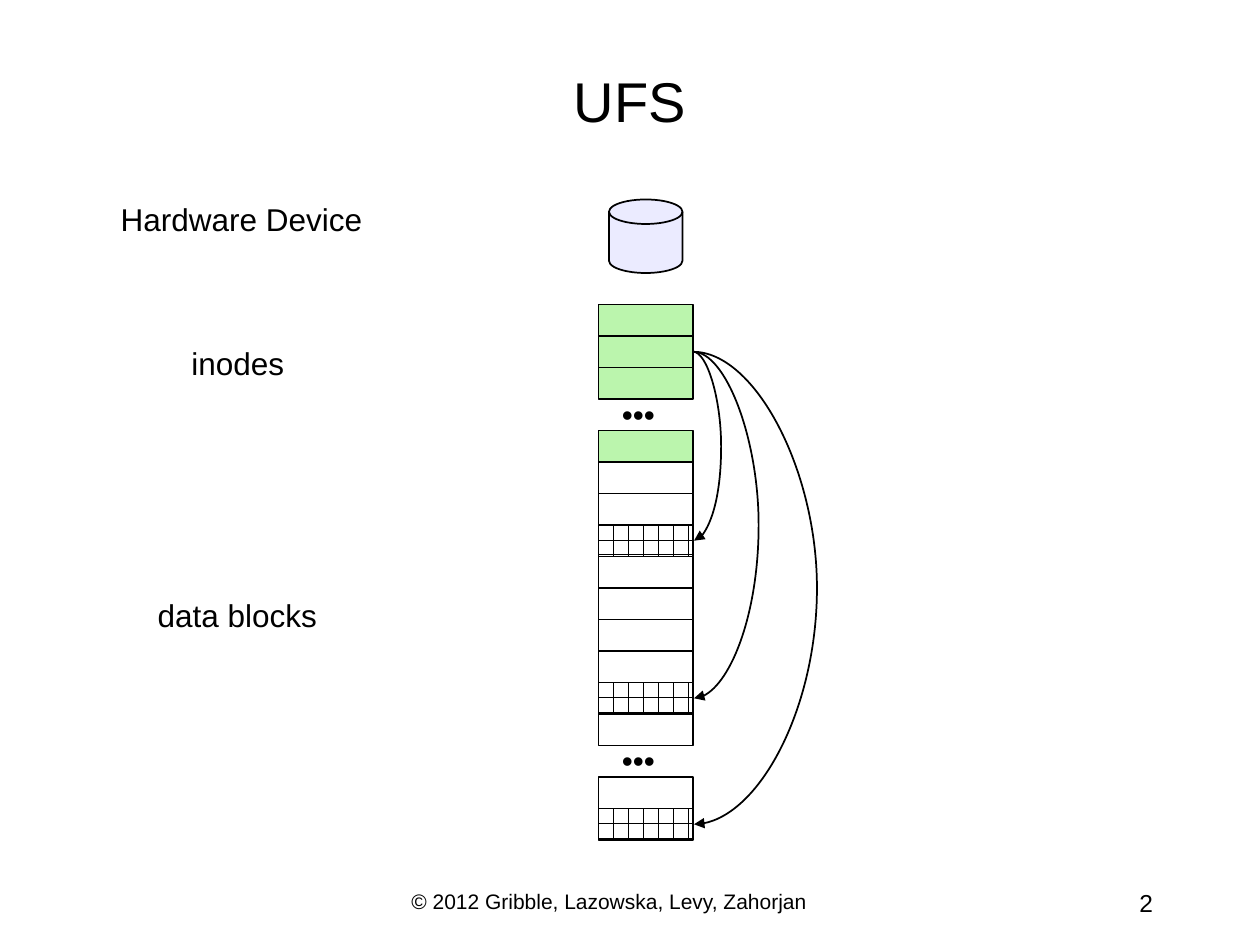
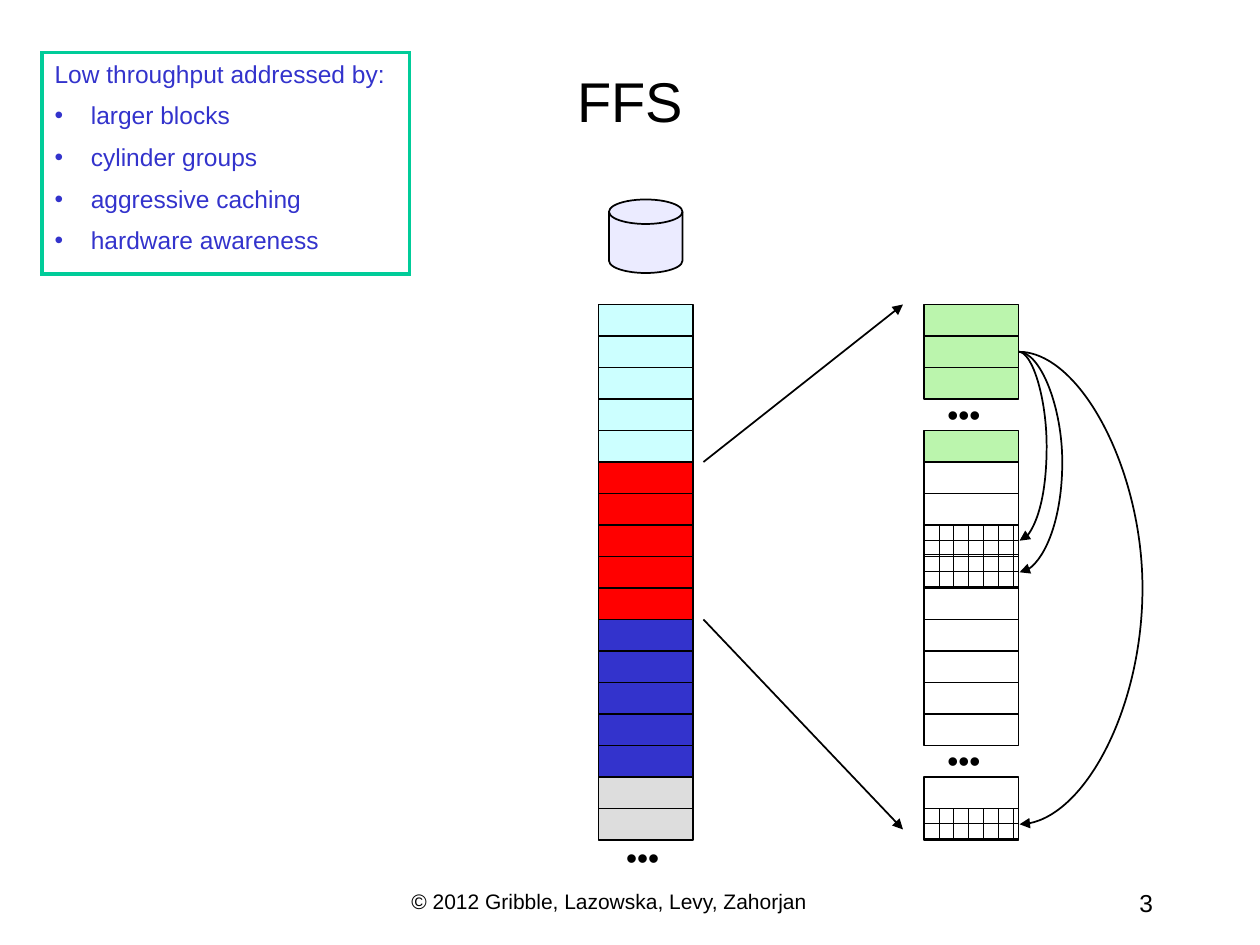
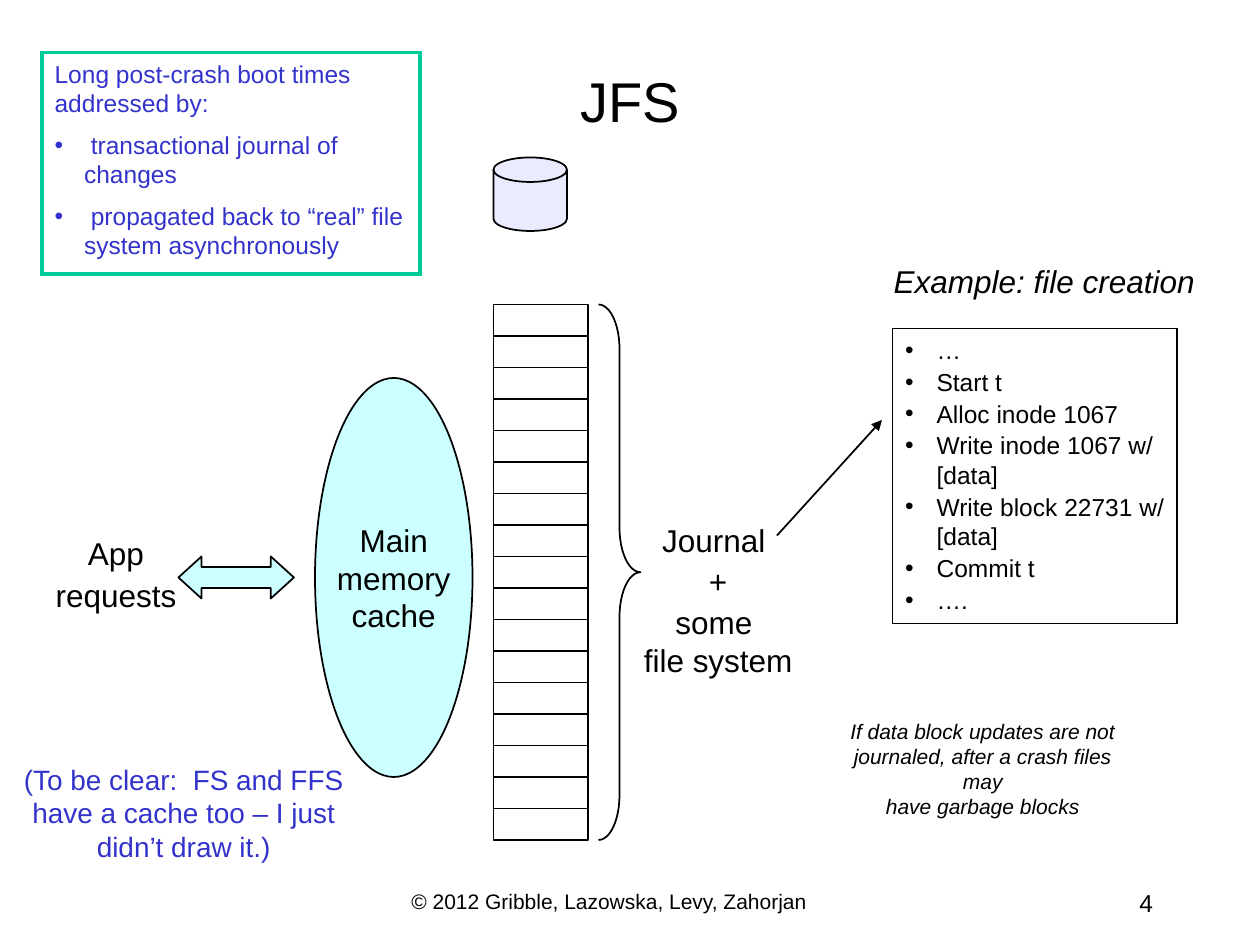
from collections import namedtuple

from lxml.etree import SubElement
from pptx import Presentation
from pptx.dml.color import RGBColor
from pptx.enum.dml import MSO_PATTERN
from pptx.enum.shapes import MSO_CONNECTOR, MSO_SHAPE
from pptx.enum.text import MSO_ANCHOR, MSO_AUTO_SIZE, PP_ALIGN
from pptx.oxml.ns import qn
from pptx.util import Emu, Pt

PX = 7620
FONT = "Arial"
BLACK = RGBColor(0x00, 0x00, 0x00)
WHITE = RGBColor(0xFF, 0xFF, 0xFF)
LAVENDER = RGBColor(0xEB, 0xEB, 0xFF)
GREEN = RGBColor(0xBB, 0xF5, 0xAD)
CYAN = RGBColor(0xCC, 0xFF, 0xFF)
RED = RGBColor(0xFF, 0x00, 0x00)
BLUE = RGBColor(0x33, 0x33, 0xCC)
GRAY = RGBColor(0xDD, 0xDD, 0xDD)
TEAL = RGBColor(0x00, 0xCC, 0x99)

EMPTY, BRICK, GAP = "empty", "brick", "gap"
INODES = [GREEN] * 3 + [GAP, GREEN]
UFS_BLOCKS = INODES + [EMPTY] * 2 + [BRICK] + [EMPTY] * 4 + [BRICK, EMPTY, GAP, EMPTY, BRICK]
FFS_BLOCKS = INODES + [EMPTY] * 2 + [BRICK] * 2 + [EMPTY] * 5 + [GAP, EMPTY, BRICK]
CYLINDER_GROUPS = [CYAN] * 5 + [RED] * 5 + [BLUE] * 5 + [GRAY] * 2

TITLE_AND_LIST, TWO_LISTS, TITLE_ONLY = 1, 3, 5

Box = namedtuple("Box", "left top width height")
SLIDE = Box(0, 0, 1200, 900)


def px(length):
    """Turn px into EMU."""
    return Emu(length * PX)


def emu_box(box):
    """Turn a box in px into four EMU lengths."""
    return [px(length) for length in box]


def style_text(frame, size, color=BLACK, align=PP_ALIGN.CENTER, gap=2, italic=False):
    """Format every paragraph and run of a text frame."""
    for index, paragraph in enumerate(frame.paragraphs):
        paragraph.alignment = align
        paragraph.space_before = Pt(gap if index else 0)
        for run in paragraph.runs:
            run.font.name = FONT
            run.font.size = Pt(size)
            run.font.italic = italic
            run.font.color.rgb = color
        for line_break in paragraph._p.findall(qn("a:br")):
            SubElement(line_break, qn("a:rPr"), sz=str(size * 100))


def add_label(slide, box, text, size=18, wrap=False, **style):
    """Add a text box holding one styled label."""
    frame = slide.shapes.add_textbox(*emu_box(box)).text_frame
    frame.word_wrap = wrap
    frame.text = text
    style_text(frame, size, **style)


def add_dots(slide, left, top):
    """Add the dots that stand for skipped blocks."""
    add_label(slide, Box(left, top, 66, 48), "•••")


def add_outlined(slide, kind, box, fill=EMPTY):
    """Add a black-outlined preset shape with a solid, brick or empty fill."""
    shape = slide.shapes.add_shape(kind, *emu_box(box))
    shape.shadow.inherit = False
    shape.line.color.rgb = BLACK
    shape.line.width = Pt(1)
    if fill == EMPTY:
        shape.fill.background()
    elif fill == BRICK:
        shape.fill.patterned()
        shape.fill.pattern = MSO_PATTERN.HORIZONTAL_BRICK
        shape.fill.fore_color.rgb = BLACK
        shape.fill.back_color.rgb = WHITE
    else:
        shape.fill.solid()
        shape.fill.fore_color.rgb = fill
    return shape


def add_disk(slide, left, top):
    """Add the hardware device."""
    add_outlined(slide, MSO_SHAPE.FLOWCHART_MAGNETIC_DISK, Box(left, top, 70, 70), LAVENDER)


def add_stack(slide, box, fills):
    """Stack equal blocks in the box and return them by row."""
    height = box.height // len(fills)
    blocks = {}
    for row, fill in enumerate(fills):
        top = box.top + row * height
        if fill == GAP:
            add_dots(slide, box.left + 5, top - 10)
        else:
            cell = Box(box.left, top, box.width, height)
            blocks[row] = add_outlined(slide, MSO_SHAPE.RECTANGLE, cell, fill)
    return blocks


def add_arrow(slide, kind, start, end):
    """Add a connector with an arrowhead at its end."""
    arrow = slide.shapes.add_connector(kind, *[px(length) for length in start + end])
    arrow.line.color.rgb = BLACK
    arrow.line.width = Pt(1)
    properties = arrow._element.spPr
    SubElement(properties.find(qn("a:ln")), qn("a:tailEnd"), type="triangle")
    SubElement(properties, qn("a:effectLst"))
    return arrow


def add_pointers(slide, blocks, bulges):
    """Curve an arrow from the second inode to each data block, by row and bulge."""
    for row, bulge in bulges.items():
        pointer = add_arrow(slide, MSO_CONNECTOR.CURVE, (0, 0), (1, 1))
        pointer.end_connect(blocks[row], 3)
        pointer.begin_connect(blocks[1], 3)
        pointer.width = px(1)
        geometry = pointer._element.spPr.find(qn("a:prstGeom"))
        guides = geometry.find(qn("a:avLst"))
        if guides is None:
            guides = SubElement(geometry, qn("a:avLst"))
        SubElement(guides, qn("a:gd"), name="adj1", fmla=f"val {bulge * 100000}")


def fill_list(holder, box, lines, color, border, weight, indent, gap, heading=False):
    """Move a body placeholder into the box and fill it with a bulleted list."""
    holder.left, holder.top, holder.width, holder.height = emu_box(box)
    holder.line.color.rgb = border
    holder.line.width = Pt(weight)
    SubElement(holder._element.spPr.find(qn("a:ln")), qn("a:miter"), lim="800000")
    frame = holder.text_frame
    frame.text = "\n".join(lines)
    frame.auto_size = MSO_AUTO_SIZE.NONE
    frame.vertical_anchor = MSO_ANCHOR.TOP
    frame.word_wrap = heading
    style_text(frame, 14, color, PP_ALIGN.LEFT, gap)
    for index, paragraph in enumerate(frame.paragraphs):
        properties = paragraph._p.get_or_add_pPr()
        if heading and index == 0:
            properties.set("marL", "0")
            properties.set("indent", "0")
            SubElement(properties, qn("a:buNone"))
        else:
            properties.set("marL", str(px(indent)))
            properties.set("indent", str(-px(indent)))
            SubElement(properties, qn("a:buFont"), typeface=FONT)
            SubElement(properties, qn("a:buChar"), char="•")


def fill_summary(holder, width, lines):
    """Fill the bordered summary in the top left corner."""
    fill_list(holder, Box(40, 50, width, 211), lines, BLUE, TEAL, 2, 28, 7, heading=True)


def start_slide(deck, layout, name, number):
    """Add a slide with its title, copyright line and number."""
    slide = deck.slides.add_slide(deck.slide_layouts[layout])
    title = slide.shapes.title
    title.left, title.top, title.width, title.height = emu_box(Box(0, 50, SLIDE.width, 90))
    title.text_frame.text = name
    title.text_frame.vertical_anchor = MSO_ANCHOR.MIDDLE
    style_text(title.text_frame, 32)
    add_label(slide, Box(380, 840, 440, 40), "© 2012 Gribble, Lazowska, Levy, Zahorjan",
              12, wrap=True, align=PP_ALIGN.LEFT)
    add_label(slide, Box(860, 840, 250, 40), str(number), 14, wrap=True, align=PP_ALIGN.RIGHT)
    return slide


def build_ufs(deck):
    """Show inodes pointing at scattered data blocks."""
    slide = start_slide(deck, TITLE_ONLY, "UFS", 2)
    add_disk(slide, 580, 190)
    blocks = add_stack(slide, Box(570, 290, 90, 510), UFS_BLOCKS)
    add_pointers(slide, blocks, {7: 27, 12: 63, 16: 119})
    add_label(slide, Box(103, 185, 254, 48), "Hardware Device")
    add_label(slide, Box(170, 322, 113, 48), "inodes")
    add_label(slide, Box(138, 562, 176, 48), "data blocks")


def build_ffs(deck):
    """Show cylinder groups and one of them opened up."""
    slide = start_slide(deck, TITLE_AND_LIST, "FFS", 3)
    add_disk(slide, 580, 190)
    blocks = add_stack(slide, Box(880, 290, 90, 510), FFS_BLOCKS)
    add_pointers(slide, blocks, {7: 27, 8: 42, 16: 119})
    add_stack(slide, Box(570, 290, 90, 510), CYLINDER_GROUPS)
    add_dots(slide, 579, 792)
    add_arrow(slide, MSO_CONNECTOR.STRAIGHT, (670, 440), (860, 290))
    add_arrow(slide, MSO_CONNECTOR.STRAIGHT, (670, 590), (860, 790))
    fill_summary(slide.placeholders[1], 350, [
        "Low throughput addressed by:",
        " larger blocks",
        " cylinder groups",
        " aggressive caching",
        " hardware awareness",
    ])


def add_cache(slide, box):
    """Add the memory cache with the requests that reach it from the left."""
    cache = Box(box.left + 260, box.top, 150, box.height)
    ellipse = add_outlined(slide, MSO_SHAPE.OVAL, cache, CYAN)
    frame = ellipse.text_frame
    frame.word_wrap = False
    frame.vertical_anchor = MSO_ANCHOR.MIDDLE
    frame.text = "Main\vmemory\vcache"
    style_text(frame, 18)
    exchange = Box(box.left + 130, box.top + 170, 110, 40)
    arrow = add_outlined(slide, MSO_SHAPE.LEFT_RIGHT_ARROW, exchange, CYAN)
    arrow.adjustments[1] = 0.55
    add_label(slide, Box(box.left + 1, box.top + 143, 139, 88), "App\nrequests")


def add_journal(slide, box):
    """Add the block stack with the brace that names its content."""
    add_stack(slide, Box(box.left, box.top, 90, box.height), [EMPTY] * 17)
    brace = add_outlined(slide, MSO_SHAPE.RIGHT_BRACE,
                         Box(box.left + 100, box.top, 40, box.height))
    brace.adjustments[0] = 1.06
    add_label(slide, Box(box.left + 131, box.top + 200, 166, 163),
              "Journal \n+\nsome \vfile system")


def add_example(slide, holder, box):
    """Add the journal entries of a file creation under their heading."""
    add_label(slide, Box(box.left - 11, box.top - 69, 311, 48),
              "Example: file creation", italic=True)
    fill_list(holder, box, [
        "…",
        "Start t",
        "Alloc inode 1067",
        "Write inode 1067 w/\v[data]",
        "Write block 22731 w/\v[data]",
        "Commit t",
        "….",
    ], BLACK, BLACK, 0.75, 30, 1.4)


def build_jfs(deck):
    """Show the journal between the cache and the file system."""
    slide = start_slide(deck, TWO_LISTS, "JFS", 4)
    add_disk(slide, 470, 150)
    add_journal(slide, Box(470, 290, 300, 510))
    add_example(slide, slide.placeholders[2], Box(850, 313, 271, 281))
    add_arrow(slide, MSO_CONNECTOR.STRAIGHT, (740, 510), (840, 400))
    add_cache(slide, Box(40, 360, 410, 380))
    add_label(slide, Box(792, 678, 288, 84),
              "If data block updates are not\vjournaled, after a crash files may"
              "\vhave garbage blocks", 12, wrap=True, italic=True)
    fill_summary(slide.placeholders[1], 360, [
        "Long post-crash boot times addressed by:",
        " transactional journal of changes",
        " propagated back to “real” file system asynchronously",
    ])
    add_label(slide, Box(0, 720, 350, 108),
              "(To be clear:  FS and FFS have a cache too – I just didn’t draw it.)",
              16, wrap=True, color=BLUE)


def main():
    """Build the three slides and save them."""
    deck = Presentation()
    deck.slide_width = px(SLIDE.width)
    deck.slide_height = px(SLIDE.height)
    build_ufs(deck)
    build_ffs(deck)
    build_jfs(deck)
    deck.save("out.pptx")


if __name__ == "__main__":
    main()
